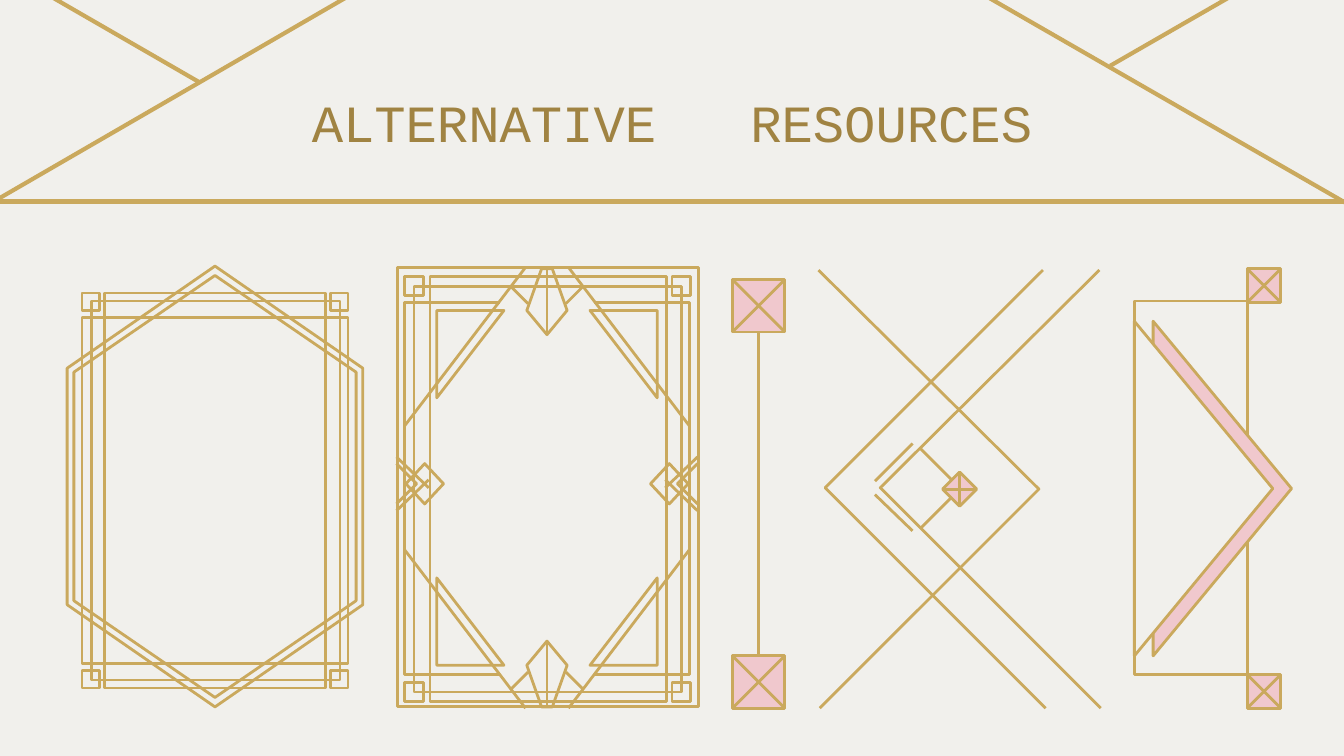
"""Build the "Alternative resources" slide of art deco frames and dividers."""
from itertools import product

from lxml import etree
from pptx import Presentation
from pptx import util as u
from pptx.dml.color import RGBColor
from pptx.enum import shapes, text
from pptx.oxml.ns import qn

PAPER, GOLD, PINK, BRONZE = "F1F0EC", "CAA95D", "F0C8CD", "A08342"
RECT = shapes.MSO_SHAPE.RECTANGLE
TRIANGLE = shapes.MSO_SHAPE.ISOSCELES_TRIANGLE
STRAIGHT = shapes.MSO_CONNECTOR.STRAIGHT

deck = Presentation()
deck.slide_width, deck.slide_height = u.Inches(10), u.Inches(10) * 9 // 16
slide = deck.slides.add_slide(deck.slide_layouts[6])
slide.background.fill.solid()
slide.background.fill.fore_color.rgb = RGBColor.from_string(PAPER)
art = slide.shapes


def paint(item, width=1.5, fill=None):
    item.line.color.rgb = RGBColor.from_string(GOLD)
    item.line.width = u.Pt(width)
    if hasattr(item, "fill"):
        item.shadow.inherit = False
        if fill:
            item.fill.solid()
            item.fill.fore_color.rgb = RGBColor.from_string(fill)
        else:
            item.fill.background()
    else:
        etree.SubElement(item._element.spPr, qn("a:effectLst"))
    return item


def add_text(paragraph, content, size=28, font="Courier New", color=BRONZE, spacing=0):
    run = paragraph.add_run()
    run.text = content
    run.font.size, run.font.name = u.Pt(size), font
    run.font.color.rgb = RGBColor.from_string(color)
    if spacing:
        run._r.get_or_add_rPr().set("spc", str(round(spacing * 100)))


band = art.add_shape(RECT, *map(u.Inches, (-1.06, -0.31, 11.24, 1.81)))
paint(band, 2.25, PAPER)
for ray in [(-0.03, 1.49, 3.51, -0.56), (10.03, 1.52, 6.5, -0.51),
            (1.48, 0.61, -1.24, -0.96), (8.26, 0.49, 10.78, -0.96)]:
    paint(art.add_connector(STRAIGHT, *map(u.Inches, ray)), 2.25)

title = art.add_textbox(*map(u.Inches, (0.66, 0.57, 8.68, 0.63))).text_frame
title.word_wrap = True
title.vertical_anchor = text.MSO_ANCHOR.TOP
title.margin_left = title.margin_right = u.Inches(0.1)
title.margin_top = title.margin_bottom = u.Inches(0.1)
heading = title.paragraphs[0]
heading.alignment = text.PP_ALIGN.CENTER
add_text(heading, "ALTERNATIVE")
add_text(heading, " ", spacing=33.6)
add_text(heading, "RESOURCES")

boxes = [(0.68, 2.24, 1.85, 2.82), (0.61, 2.36, 1.98, 2.58), (0.78, 2.18, 1.64, 2.94),
         (3.08, 2.13, 1.99, 3.02), (3.2, 2.06, 1.76, 3.16), (2.96, 1.99, 2.24, 3.27)]
boxes += [(x, y, 0.13, 0.13) for x, y in product((0.61, 2.46), (2.18, 4.99))]
boxes += [(x, y, 0.14, 0.14) for x, y in product((3.01, 5), (2.06, 5.08))]
for box in boxes:
    paint(art.add_shape(RECT, *map(u.Inches, box)))

strokes = []
for half_w, half_h, shoulder in [(1.1, 1.64, 0.88), (1.05, 1.57, 0.85)]:
    hexagon = [(0, -half_h), (half_w, -shoulder), (half_w, shoulder),
               (0, half_h), (-half_w, shoulder), (-half_w, -shoulder)]
    strokes.append(([(1.6 + x, 3.62 + y) for x, y in hexagon], True))

MID_X, MID_Y, SIDE_Y = 4.07, 3.63, 3.6
for side, end in product((-1, 1), (-1, 1)):
    for points, mid, closed in [([(0.82, 1.32), (0.32, 1.32), (0.82, 0.67)], MID_Y, True),
                                ([(0.16, 1.64), (1.06, 0.46)], MID_Y, False),
                                ([(0.27, 1.5), (0.14, 1.37)], MID_Y, False),
                                ([(1.12, 0.2), (0.88, -0.03)], SIDE_Y, False)]:
        strokes.append(([(MID_X + side * x, mid + end * y) for x, y in points], closed))
for end in (-1, 1):
    fan = [(-0.04, 1.63), (-0.15, 1.32), (0, 1.14), (0.15, 1.32), (0.04, 1.63)]
    for points, closed in [(fan, True), ([(0, 1.63), (0, 1.14)], False)]:
        strokes.append(([(MID_X + x, MID_Y + end * y) for x, y in points], closed))
for side in (-1, 1):
    bracket = [(0.35, -1.35), (1.06, -1.35), (1.06, 1.42), (0.35, 1.42)]
    lozenge = [(0.91, -0.15), (1.05, 0), (0.91, 0.15), (0.77, 0)]
    chevron = [(1.12, -0.15), (0.97, 0), (1.12, 0.15)]
    for points, closed in [(bracket, False), (lozenge, True), (chevron, False)]:
        strokes.append(([(MID_X + side * x, SIDE_Y + y) for x, y in points], closed))

strokes += [([(8.18, 2.01), (6.55, 3.63), (8.19, 5.27)], False),
            ([(7.76, 2.01), (6.14, 3.63), (7.78, 5.27)], False),
            ([(6.1, 5.27), (7.73, 3.64), (6.09, 2.01)], False)]

for points, closed in strokes:
    corners = [(u.Inches(x), u.Inches(y)) for x, y in points]
    if len(corners) == 2:
        paint(art.add_connector(STRAIGHT, *corners[0], *corners[1]))
    else:
        outline = art.build_freeform(*corners[0])
        outline.add_line_segments(corners[1:], close=closed)
        paint(outline.convert_to_shape())

diamond = paint(art.add_shape(RECT, *map(u.Inches, (7.05, 3.55, 0.18, 0.18))), fill=PINK)
diamond.rotation = 45
for bar in [(7.14, 3.51, 7.14, 3.77), (7.01, 3.64, 7.27, 3.64),
            (6.79, 3.3, 6.51, 3.58), (6.79, 3.95, 6.51, 3.68)]:
    paint(art.add_connector(STRAIGHT, *map(u.Inches, bar)))
for site, arm in [(1, (7.08, 3.57, 6.85, 3.34)), (2, (7.08, 3.7, 6.85, 3.93))]:
    strut = paint(art.add_connector(STRAIGHT, *map(u.Inches, arm)))
    strut.begin_connect(diamond, site)
    strut.begin_x, strut.begin_y = u.Inches(arm[0]), u.Inches(arm[1])

paint(art.add_shape(RECT, *map(u.Inches, (8.44, 2.24, 0.84, 2.78))), fill=PAPER)
for left, fill in [(7.85, PINK), (7.71, PAPER)]:
    arrow = art.add_shape(TRIANGLE, *map(u.Inches, (left, 3.12, 2.49, 1.03)))
    paint(arrow, fill=fill).rotation = 90

squares = []
for left, top, size in [(5.45, 2.08, 0.39), (5.45, 4.88, 0.39),
                        (9.28, 2, 0.25), (9.28, 5.02, 0.25)]:
    square = art.add_shape(RECT, *map(u.Inches, (left, top, size, size)))
    squares.append(paint(square, fill=PINK))
    right, bottom = left + size, top + size
    for cross in [(right, top, left, bottom), (left, top, right, bottom)]:
        paint(art.add_connector(STRAIGHT, *map(u.Inches, cross)))

spine = paint(art.add_connector(STRAIGHT, *map(u.Inches, (5.64, 2.47, 5.64, 4.88))))
spine.begin_connect(squares[0], 2)
spine.end_connect(squares[1], 0)

deck.save("out.pptx")
